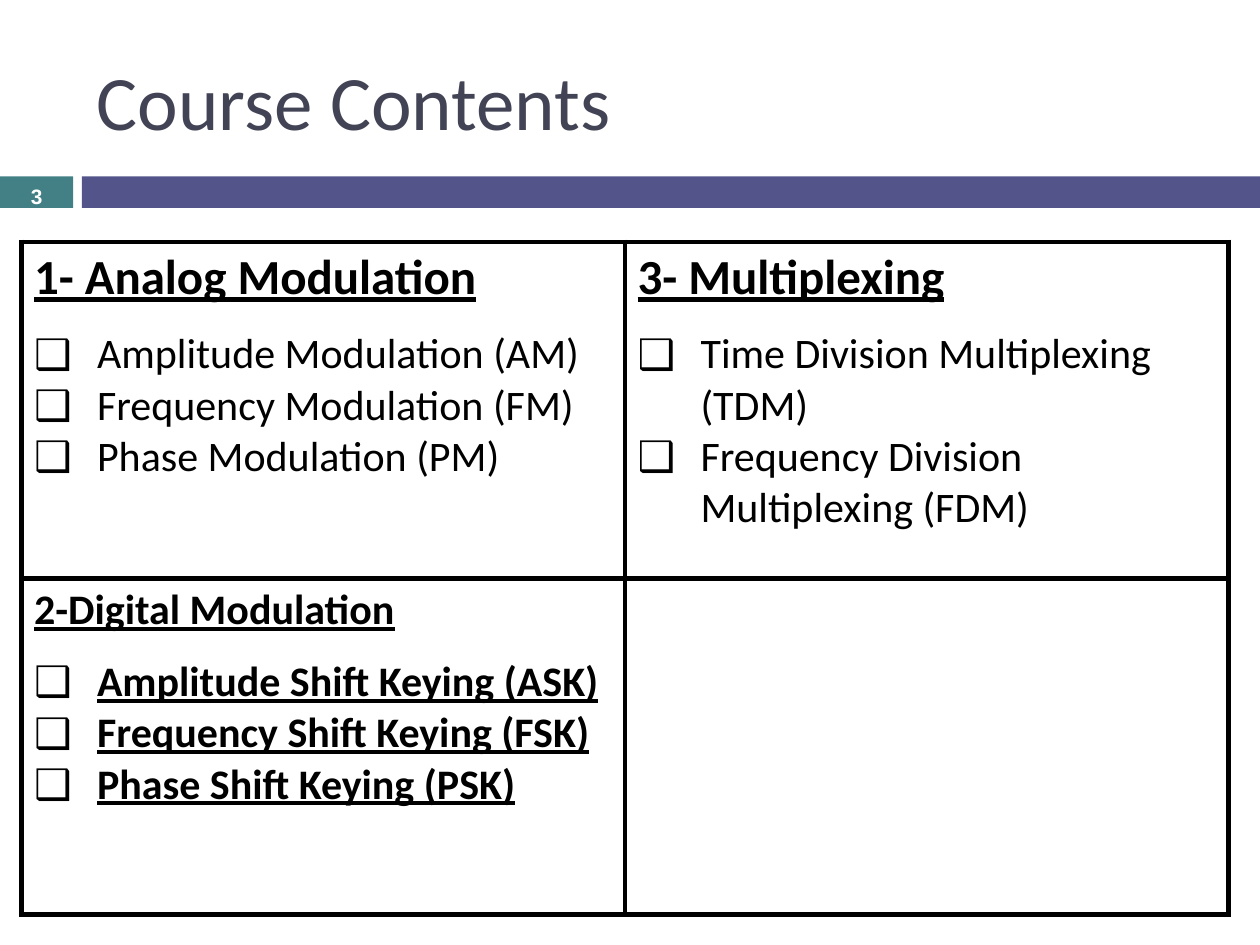
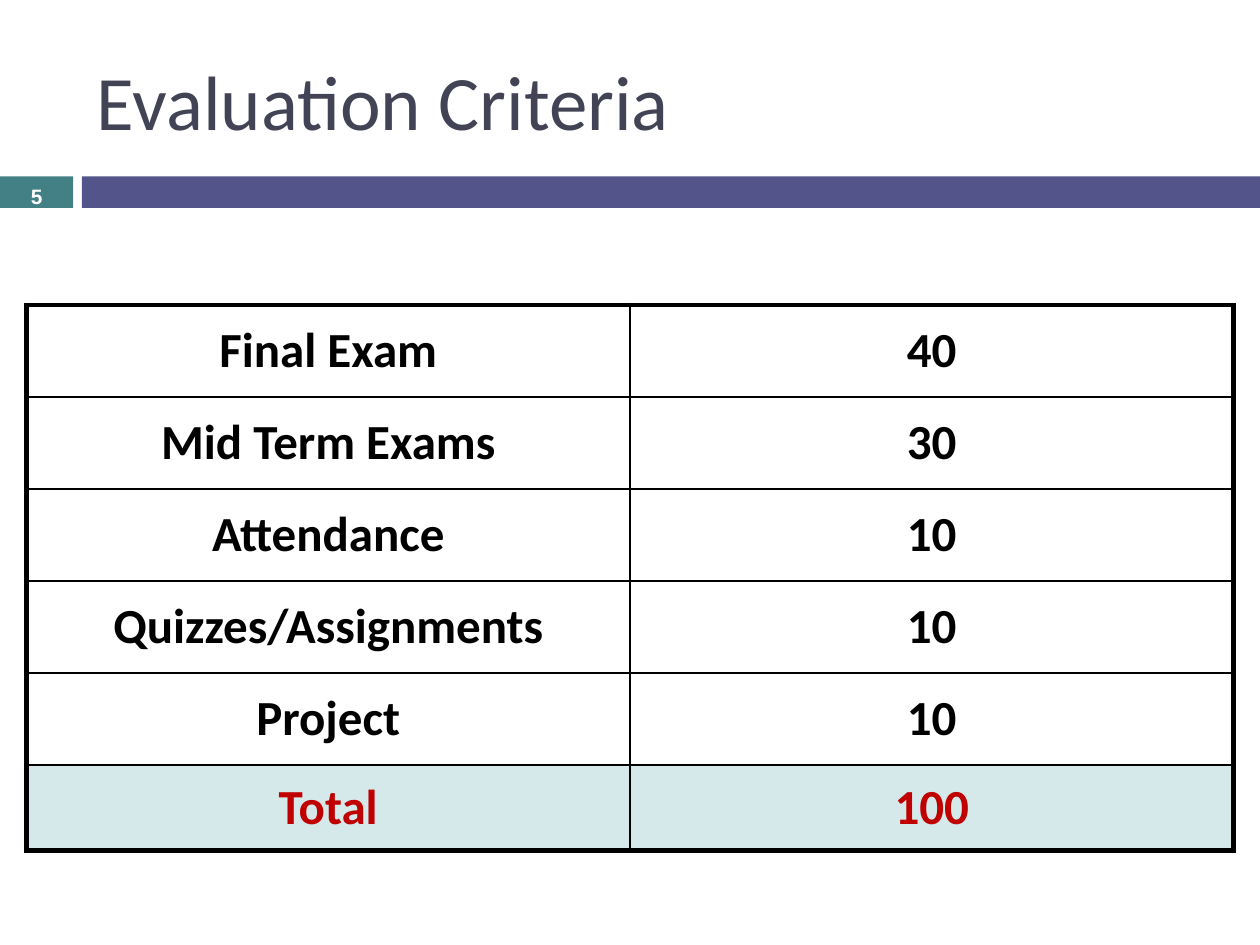
import dataclasses

import lxml.etree
import pptx
import pptx.dml.color
import pptx.enum.shapes
import pptx.enum.text
import pptx.oxml.ns
import pptx.util

Inches = pptx.util.Inches
Pt = pptx.util.Pt
qn = pptx.oxml.ns.qn
CENTER = pptx.enum.text.PP_ALIGN.CENTER
MIDDLE = pptx.enum.text.MSO_ANCHOR.MIDDLE


@dataclasses.dataclass(frozen=True)
class Theme:
    title_color: str = "424456"
    number_band: str = "438086"
    title_band: str = "53548A"
    ink: str = "000000"
    white: str = "FFFFFF"
    total_ink: str = "C00000"
    total_fill: str = "D6E9EA"
    body_font: str = "Calibri"
    number_font: str = "Arial"
    title_size: float = 44
    heading_size: float = 28
    item_size: float = 24
    number_size: float = 11.9
    thick_line: float = 3
    thin_line: float = 1


THEME = Theme()

# Each cell: heading, heading size, items, whether the items are emphasised
COURSE_CELLS = [
    [
        ("1- Analog Modulation", THEME.heading_size,
         ["Amplitude Modulation (AM)", "Frequency Modulation (FM)", "Phase Modulation (PM)"], False),
        ("3- Multiplexing", THEME.heading_size,
         ["Time Division Multiplexing (TDM)", "Frequency Division Multiplexing (FDM)"], False),
    ],
    [
        ("2-Digital Modulation", THEME.item_size,
         ["Amplitude Shift Keying (ASK)", "Frequency Shift Keying (FSK)", "Phase Shift Keying (PSK)"], True),
        None,
    ],
]

CRITERIA = [
    ("Final Exam", 40),
    ("Mid Term Exams", 30),
    ("Attendance", 10),
    ("Quizzes/Assignments", 10),
    ("Project", 10),
]


def rgb(color):
    return pptx.dml.color.RGBColor.from_string(color)


def write(para, text, color=THEME.ink, **formats):
    span = para.add_run()
    span.text = text
    span.font.color.rgb = rgb(color)
    for name, value in ({"name": THEME.body_font} | formats).items():
        setattr(span.font, name, value)


def add_band(page, left, width, color):
    band = page.shapes.add_shape(
        pptx.enum.shapes.MSO_SHAPE.RECTANGLE,
        Inches(left), Inches(1.4), Inches(width), Inches(0.25))
    band.shadow.inherit = False
    band.fill.solid()
    band.fill.fore_color.rgb = rgb(color)
    band.line.fill.background()


def add_text_box(page, left, top, width, height, **frame_formats):
    """Add a vertically centred box and return its first paragraph."""
    box = page.shapes.add_textbox(Inches(left), Inches(top), Inches(width), Inches(height))
    frame = box.text_frame
    for name, value in ({"word_wrap": True, "vertical_anchor": MIDDLE} | frame_formats).items():
        setattr(frame, name, value)
    return frame.paragraphs[0]


def add_page(deck, title, number):
    page = deck.slides.add_slide(deck.slide_layouts[6])
    add_band(page, 0, 0.58, THEME.number_band)
    add_band(page, 0.65, 9.35, THEME.title_band)
    write(add_text_box(page, 0.67, 0.25, 8.92, 1.08), title,
          THEME.title_color, size=Pt(THEME.title_size))
    para = add_text_box(page, 0, 1.42, 0.58, 0.27, margin_top=0, margin_bottom=0)
    para.alignment = CENTER
    write(para, str(number), THEME.white, name=THEME.number_font,
          size=Pt(THEME.number_size), bold=True)
    return page


def set_borders(cell, widths):
    """Draw the left, right, top and bottom lines; call before filling the cell."""
    properties = cell._tc.get_or_add_tcPr()
    for side, width in zip("LRTB", widths):
        line = lxml.etree.SubElement(properties, qn(f"a:ln{side}"), w=str(Pt(width)))
        fill = lxml.etree.SubElement(line, qn("a:solidFill"))
        lxml.etree.SubElement(fill, qn("a:srgbClr"), val=THEME.ink)


def add_grid(page, left, top, row_heights, inner_line):
    """Add a two-column table with a thick frame and the given inner lines."""
    columns = 2
    column_width = 4.79
    rows = len(row_heights)
    table = page.shapes.add_table(
        rows, columns, Inches(left), Inches(top),
        Inches(columns * column_width), Inches(sum(row_heights))).table
    table.first_row = table.horz_banding = False
    for column in table.columns:
        column.width = Inches(column_width)
    for r, height in enumerate(row_heights):
        table.rows[r].height = Inches(height)
        for c in range(columns):
            outer = (c == 0, c == columns - 1, r == 0, r == rows - 1)
            cell = table.cell(r, c)
            set_borders(cell, [THEME.thick_line if edge else inner_line for edge in outer])
            cell.fill.background()
    return table


def make_bullet(para):
    properties = para._p.get_or_add_pPr()
    properties.set("marL", str(Inches(0.5)))
    properties.set("indent", str(Inches(-0.5)))
    lxml.etree.SubElement(properties, qn("a:buFont"), typeface=THEME.number_font)
    lxml.etree.SubElement(properties, qn("a:buChar"), char="❑")


def write_topic(cell, heading, heading_size, items, emphasised):
    frame = cell.text_frame
    para = frame.paragraphs[0]
    para.space_after = Pt(12)
    write(para, heading, size=Pt(heading_size), bold=True, underline=True)
    for item in items:
        para = frame.add_paragraph()
        make_bullet(para)
        write(para, item, size=Pt(THEME.item_size), bold=emphasised, underline=emphasised)


def write_score_row(table, row, values, color=THEME.ink, fill=None):
    for column, value in enumerate(values):
        cell = table.cell(row, column)
        cell.vertical_anchor = MIDDLE
        para = cell.text_frame.paragraphs[0]
        para.alignment = CENTER
        write(para, str(value), color, size=Pt(THEME.heading_size), bold=True)
        if fill:
            cell.fill.solid()
            cell.fill.fore_color.rgb = rgb(fill)


def add_course_contents(deck):
    page = add_page(deck, "Course Contents", 3)
    table = add_grid(page, 0.17, 1.92, [2.67] * len(COURSE_CELLS), THEME.thick_line)
    for r, topics in enumerate(COURSE_CELLS):
        for c, topic in enumerate(topics):
            if topic:
                write_topic(table.cell(r, c), *topic)


def add_evaluation_criteria(deck):
    page = add_page(deck, "Evaluation Criteria", 5)
    table = add_grid(page, 0.21, 2.42, [0.73] * len(CRITERIA) + [0.68], THEME.thin_line)
    for row, criterion in enumerate(CRITERIA):
        write_score_row(table, row, criterion)
    total = sum(score for _, score in CRITERIA)
    write_score_row(table, len(CRITERIA), ("Total", total), THEME.total_ink, THEME.total_fill)


def main():
    deck = pptx.Presentation()
    deck.slide_width = Inches(10)
    deck.slide_height = Inches(7.5)
    add_course_contents(deck)
    add_evaluation_criteria(deck)
    deck.save("out.pptx")


if __name__ == "__main__":
    main()
